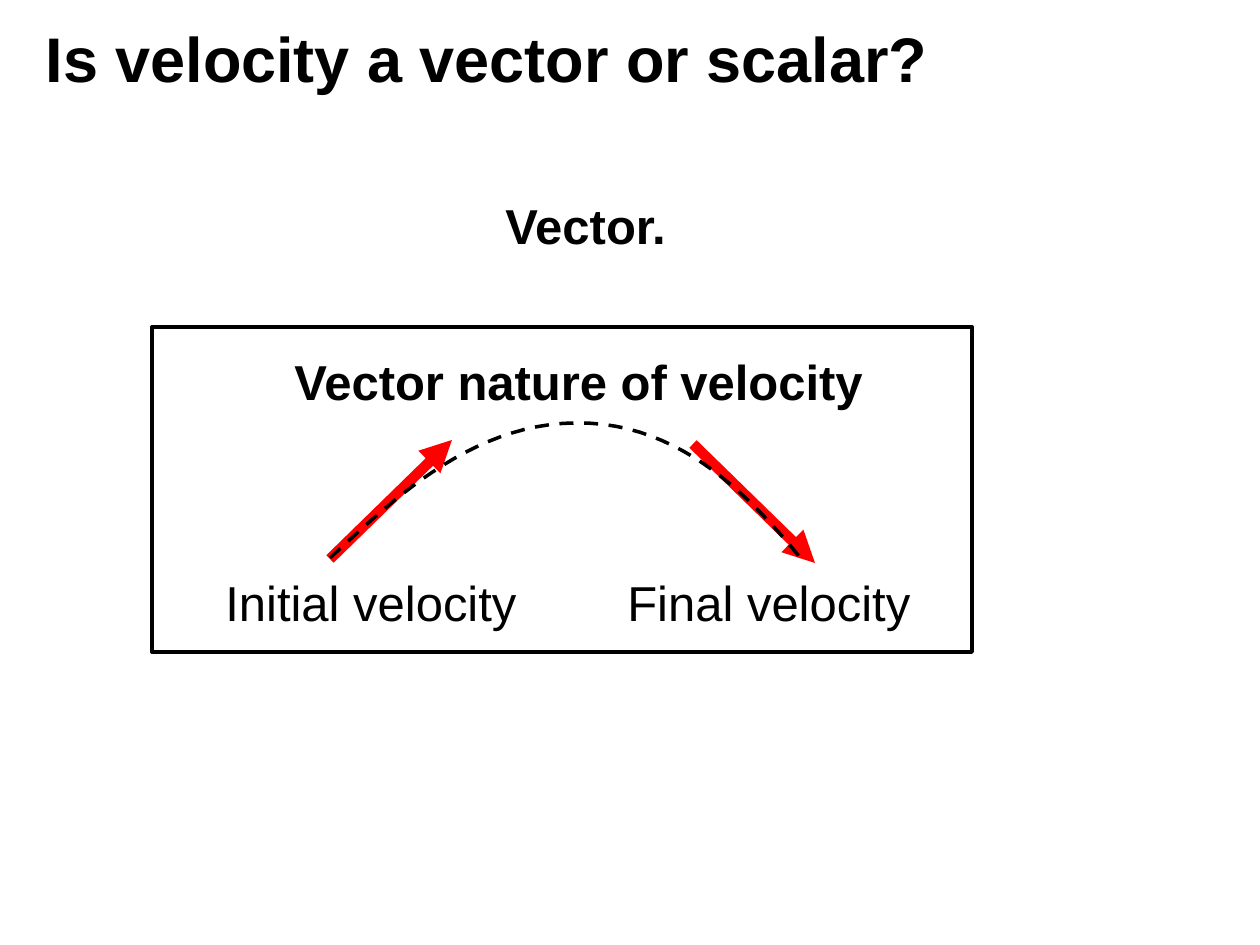
from dataclasses import dataclass

from lxml import etree
from pptx import Presentation
from pptx.dml.color import RGBColor
from pptx.enum.dml import MSO_LINE
from pptx.enum.shapes import MSO_CONNECTOR, MSO_SHAPE
from pptx.enum.text import MSO_ANCHOR, PP_ALIGN
from pptx.oxml.ns import qn
from pptx.util import Pt

RECTANGLE = MSO_SHAPE.RECTANGLE
STRAIGHT = MSO_CONNECTOR.STRAIGHT
DASH = MSO_LINE.DASH
LEFT = PP_ALIGN.LEFT
MIDDLE = MSO_ANCHOR.MIDDLE
TOP = MSO_ANCHOR.TOP


@dataclass(frozen=True)
class Theme:
    font: str = "Arial"
    ink: RGBColor = RGBColor(0, 0, 0)
    paper: RGBColor = RGBColor(255, 255, 255)
    arrow: RGBColor = RGBColor(255, 0, 0)
    title_size: int = 36
    text_size: int = 28
    frame_width: float = 2.25
    arrow_width: int = 6
    path_width: int = 2


THEME = Theme()
EMU_PER_PX = 914400 / 126
CURVE_STEPS = 24

# Boxes are left, top, width, height in px; points are x, y in px.
SLIDE_SIZE = (1260, 945)
TITLE = ("Is velocity a vector or scalar?", (33, 21, 1202, 82))
FRAME = (152, 327, 820, 325)
HEADINGS = [
    ("Vector.", (493, 189, 242, 72)),
    ("Vector nature of velocity", (282, 345, 610, 72)),
]
LABELS = [
    ("Initial velocity", (213, 566, 329, 72)),
    ("Final velocity", (615, 566, 312, 72)),
]
VELOCITY_ARROWS = [((330, 559), (452, 440)), ((693, 444), (815, 563))]
TRAJECTORY = [
    [(330, 558), (384, 509), (467, 423), (577, 423)],
    [(577, 423), (685, 422), (757, 505), (803, 561)],
]


def px(*lengths):
    return [round(length * EMU_PER_PX) for length in lengths]


def write(shape, text, *, size=THEME.text_size, bold=False, wrap=True,
          anchor=TOP, line_spacing=None):
    frame = shape.text_frame
    frame.word_wrap = wrap
    frame.vertical_anchor = anchor
    para = frame.paragraphs[0]
    para.alignment = LEFT
    para.line_spacing = line_spacing
    span = para.add_run()
    span.text = text
    span.font.name = THEME.font
    span.font.size = Pt(size)
    span.font.bold = bold
    span.font.color.rgb = THEME.ink


def style_line(shape, color, width):
    shape.line.color.rgb = color
    shape.line.width = Pt(width)


def add_arrow(page, start, end):
    arrow = page.shapes.add_connector(STRAIGHT, *px(*start, *end))
    style_line(arrow, THEME.arrow, THEME.arrow_width)
    outline = arrow.line._get_or_add_ln()
    etree.SubElement(outline, qn("a:tailEnd"), type="triangle")
    etree.SubElement(arrow._element.spPr, qn("a:effectLst"))


def bezier_point(controls, t):
    weights = ((1 - t) ** 3, 3 * t * (1 - t) ** 2, 3 * t * t * (1 - t), t ** 3)
    return tuple(sum(w * value for w, value in zip(weights, axis))
                 for axis in zip(*controls))


def add_trajectory(page):
    points = [px(*bezier_point(controls, step / CURVE_STEPS))
              for controls in TRAJECTORY for step in range(1, CURVE_STEPS + 1)]
    builder = page.shapes.build_freeform(*px(*TRAJECTORY[0][0]))
    builder.add_line_segments(points, close=False)
    curve = builder.convert_to_shape()
    curve.shadow.inherit = False
    curve.fill.background()
    style_line(curve, THEME.ink, THEME.path_width)
    curve.line.dash_style = DASH


def main():
    deck = Presentation()
    deck.slide_width, deck.slide_height = px(*SLIDE_SIZE)
    page = deck.slides.add_slide(deck.slide_layouts[5])

    text, box = TITLE
    title = page.shapes.title
    title.left, title.top, title.width, title.height = px(*box)
    write(title, text, size=THEME.title_size, bold=True, anchor=MIDDLE,
          line_spacing=0.9)

    frame = page.shapes.add_shape(RECTANGLE, *px(*FRAME))
    frame.shadow.inherit = False
    frame.fill.solid()
    frame.fill.fore_color.rgb = THEME.paper
    style_line(frame, THEME.ink, THEME.frame_width)

    for start, end in VELOCITY_ARROWS:
        add_arrow(page, start, end)
    add_trajectory(page)

    for text, box in HEADINGS:
        write(page.shapes.add_textbox(*px(*box)), text, bold=True)
    for text, box in LABELS:
        write(page.shapes.add_textbox(*px(*box)), text, wrap=False)

    deck.save("out.pptx")


if __name__ == "__main__":
    main()
